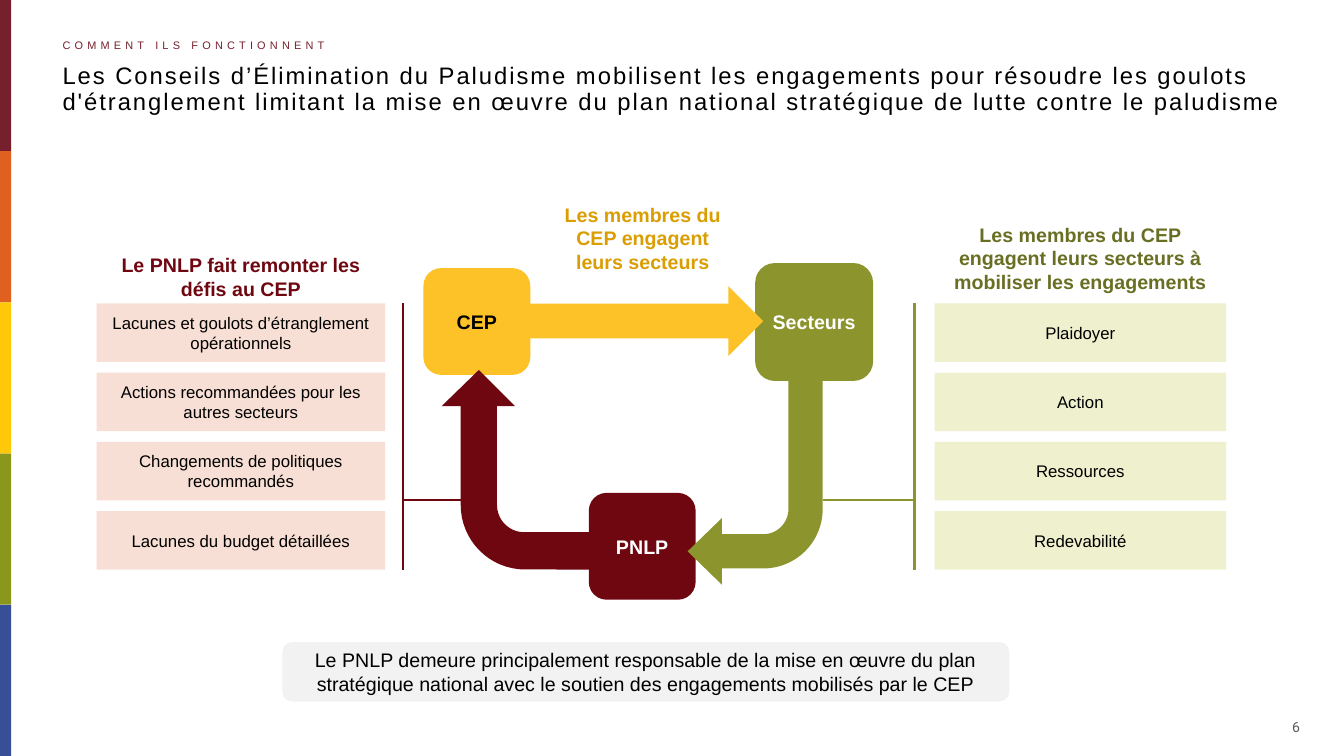
"""Build the slide on how malaria elimination councils mobilise commitments."""
from dataclasses import dataclass
from math import cos, radians, sin

from lxml import etree
from pptx import Presentation
from pptx.dml.color import RGBColor
from pptx.enum.shapes import MSO_CONNECTOR, MSO_SHAPE
from pptx.enum.text import MSO_ANCHOR, PP_ALIGN
from pptx.oxml.ns import qn
from pptx.util import Inches, Pt

RECTANGLE, ROUNDED = MSO_SHAPE.RECTANGLE, MSO_SHAPE.ROUNDED_RECTANGLE
RIGHT_ARROW, STRAIGHT = MSO_SHAPE.RIGHT_ARROW, MSO_CONNECTOR.STRAIGHT
LEFT, CENTER = PP_ALIGN.LEFT, PP_ALIGN.CENTER
TOP, MIDDLE = MSO_ANCHOR.TOP, MSO_ANCHOR.MIDDLE


@dataclass(frozen=True)
class Theme:
    font: str = "Arial"
    number_font: str = "Roboto"
    black: str = "000000"
    white: str = "FFFFFF"
    gray: str = "595959"
    pale_gray: str = "F2F2F2"
    burgundy: str = "76202D"
    maroon: str = "6F0710"
    pink: str = "F7DFD5"
    olive: str = "8C942D"
    dark_olive: str = "696F22"
    pale_olive: str = "EEF0CE"
    yellow: str = "FDC228"
    gold: str = "DA9E02"
    stripes: tuple = ("76202D", "E06020", "FFC90A", "8B971B", "364F97")
    title_size: float = 17
    heading_size: float = 14
    card_size: float = 12
    number_size: float = 10
    kicker_size: float = 7.8
    line_width: float = 1.5


theme = Theme()
presentation = Presentation()
presentation.slide_width = Inches(13.33)
presentation.slide_height = Inches(7.5)
slide = presentation.slides.add_slide(presentation.slide_layouts[6])
shapes = slide.shapes


def add_box(position, text="", size=theme.heading_size, color=theme.black, fill=None,
            kind=RECTANGLE, bold=False, align=CENTER, anchor=MIDDLE, inset=0.1,
            font=theme.font):
    """Add a filled shape, or a text box when there is no fill."""
    bounds = [Inches(value) for value in position]
    if fill:
        shape = shapes.add_shape(kind, *bounds)
        shape.shadow.inherit = False
        shape.fill.solid()
        shape.fill.fore_color.rgb = RGBColor.from_string(fill)
        shape.line.fill.background()
    else:
        shape = shapes.add_textbox(*bounds)
    if text:
        frame = shape.text_frame
        frame.text = text
        frame.word_wrap = True
        frame.vertical_anchor = anchor
        frame.margin_left = frame.margin_right = Inches(inset)
        frame.margin_top = frame.margin_bottom = Inches(min(inset, 0.05))
        paragraph = frame.paragraphs[0]
        paragraph.alignment = align
        run_font = paragraph.runs[0].font
        run_font.name, run_font.size, run_font.bold = font, Pt(size), bold
        run_font.color.rgb = RGBColor.from_string(color)
    return shape


def arc(center_x, center_y, radius, start, end, steps=16):
    """Return points along a circular arc, with angles in degrees."""
    angles = [radians(start + (end - start) * step / steps) for step in range(steps + 1)]
    return [(center_x + radius * cos(angle), center_y + radius * sin(angle))
            for angle in angles]


stripe_height = 7.5 / len(theme.stripes)
for index, color in enumerate(theme.stripes):
    add_box((0, index * stripe_height, 0.11, stripe_height), fill=color)

page_number = add_box((12.76, 7.08, 0.19, 0.25), "6", theme.number_size, theme.gray,
                      anchor=TOP, inset=0.05, font=theme.number_font)
page_number.text_frame.word_wrap = False

title = add_box(
    (0.57, 0.59, 12.29, 0.83),
    "Les Conseils d’Élimination du Paludisme mobilisent les engagements pour résoudre "
    "les goulots d'étranglement limitant la mise en œuvre du plan national stratégique "
    "de lutte contre le paludisme",
    theme.title_size, align=LEFT, anchor=TOP, inset=0.05)
kicker = add_box((0.57, 0.29, 12.29, 0.27), "COMMENT ILS FONCTIONNENT",
                 theme.kicker_size, theme.burgundy, align=LEFT, inset=0.05)
for shape, line_spacing, letter_spacing in ((title, 0.9, 140), (kicker, 1.3, 300)):
    paragraph = shape.text_frame.paragraphs[0]
    paragraph.line_spacing = line_spacing
    paragraph.runs[0]._r.get_or_add_rPr().set("spc", str(letter_spacing))

add_box((2.8, 6.37, 7.21, 0.59),
        "Le PNLP demeure principalement responsable de la mise en œuvre du plan "
        "stratégique national avec le soutien des engagements mobilisés par le CEP",
        fill=theme.pale_gray, kind=ROUNDED)

challenges = ("Lacunes et goulots d’étranglement opérationnels",
              "Actions recommandées pour les autres secteurs",
              "Changements de politiques recommandés",
              "Lacunes du budget détaillées")
commitments = ("Plaidoyer", "Action", "Ressources", "Redevabilité")
card_top, card_step, card_height = 3.01, 0.687, 0.58
for left, width, fill, labels in ((0.96, 2.86, theme.pink, challenges),
                                  (9.27, 2.89, theme.pale_olive, commitments)):
    for row, label in enumerate(labels):
        add_box((left, card_top + row * card_step, width, card_height), label,
                theme.card_size, fill=fill)

for position, text, color in (
        ((1.09, 2.51, 2.6, 0.44), "Le PNLP fait remonter les défis au CEP", theme.maroon),
        ((9.38, 2.21, 2.67, 0.66),
         "Les membres du CEP engagent leurs secteurs à mobiliser les engagements",
         theme.dark_olive),
        ((5.47, 2.01, 1.81, 0.66), "Les membres du CEP engagent leurs secteurs", theme.gold)):
    add_box(position, text, color=color, bold=True, anchor=TOP, inset=0)

for start_x, start_y, end_x, end_y, color in (
        (4, 3.01, 4, 5.65, theme.maroon), (4, 4.96, 4.89, 4.96, theme.maroon),
        (9.07, 3.01, 9.07, 5.65, theme.olive), (9.07, 4.96, 8.16, 4.96, theme.olive)):
    connector = shapes.add_connector(STRAIGHT, Inches(start_x), Inches(start_y),
                                     Inches(end_x), Inches(end_y))
    connector.line.color.rgb = RGBColor.from_string(color)
    connector.line.width = Pt(theme.line_width)
    etree.SubElement(connector._element.spPr, qn("a:effectLst"))

for left, top, side, text, color, fill in (
        (5.84, 4.89, 1.06, "PNLP", theme.white, theme.maroon),
        (7.49, 2.61, 1.17, "Secteurs", theme.white, theme.olive),
        (4.2, 2.66, 1.06, "CEP", theme.black, theme.yellow)):
    add_box((left, top, side, side), text, color=color, fill=fill, kind=ROUNDED, bold=True)

add_box((5.24, 2.84, 2.33, 0.69), fill=theme.yellow, kind=RIGHT_ARROW)

sectors_to_program = [
    (8.16, 3.69), *arc(7.57, 5.05, 0.59, 0, 90),
    (7.16, 5.64), (7.16, 5.8), (6.82, 5.47), (7.16, 5.14), (7.16, 5.3),
    *arc(7.57, 5.05, 0.25, 90, 0), (7.82, 3.69)]
program_to_council = [
    (5.84, 5.65), *arc(5.21, 5.01, 0.64, 90, 180),
    (4.57, 4.03), (4.38, 4.03), (4.75, 3.67), (5.11, 4.03), (4.93, 4.03),
    *arc(5.2, 5.01, 0.27, 180, 90), (5.84, 5.28)]
for outline, color in ((sectors_to_program, theme.olive),
                       (program_to_council, theme.maroon)):
    points = [(Inches(x), Inches(y)) for x, y in outline]
    builder = shapes.build_freeform(*points[0])
    builder.add_line_segments(points[1:], close=True)
    bent_arrow = builder.convert_to_shape()
    bent_arrow.shadow.inherit = False
    bent_arrow.fill.solid()
    bent_arrow.fill.fore_color.rgb = RGBColor.from_string(color)
    bent_arrow.line.fill.background()

presentation.save("out.pptx")
